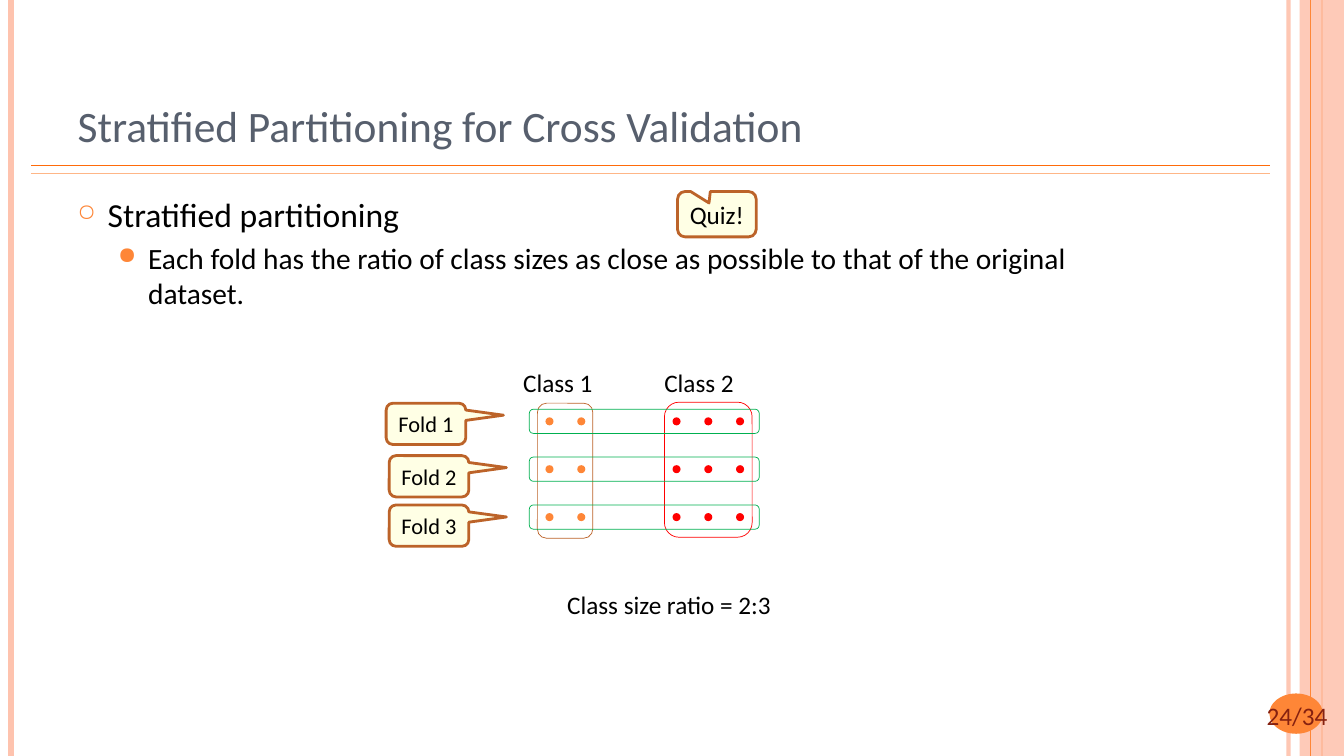
import pptx
import pptx.dml.color
import pptx.enum.shapes
import pptx.enum.text
import pptx.oxml
import pptx.oxml.ns
import pptx.util

Inches = pptx.util.Inches
Pt = pptx.util.Pt
RGBColor = pptx.dml.color.RGBColor
SHAPE = pptx.enum.shapes.MSO_SHAPE
ALIGN = pptx.enum.text.PP_ALIGN
ANCHOR = pptx.enum.text.MSO_ANCHOR
AUTO_SIZE = pptx.enum.text.MSO_AUTO_SIZE
qn = pptx.oxml.ns.qn

BLACK = RGBColor(0x00, 0x00, 0x00)
SLATE = RGBColor(0x57, 0x5F, 0x6D)
ORANGE = RGBColor(0xFE, 0x86, 0x37)
DEEP_ORANGE = RGBColor(0xFF, 0x6B, 0x0A)
PALE_ORANGE = RGBColor(0xFE, 0xB6, 0x87)
PEACH = RGBColor(0xFE, 0xC3, 0xAE)
BROWN = RGBColor(0xBC, 0x63, 0x29)
MAROON = RGBColor(0x86, 0x21, 0x10)
RED = RGBColor(0xFF, 0x00, 0x00)
GREEN = RGBColor(0x00, 0xB0, 0x50)
CREAM = RGBColor(0xFF, 0xFF, 0xCC)

FONT = "Calibri"
LABEL_FRAME = {"word_wrap": False, "auto_size": AUTO_SIZE.SHAPE_TO_FIT_TEXT}

# Dot grid: columns and rows share one pitch each
DOT_SIZE = 0.08
DOT_LEFT, DOT_TOP = 5.41, 4.14
COLUMN_PITCH = 1.89 / 6
ROW_PITCH = 0.95 / 2
FOLDS = 3


def apply_format(target, values):
    for name, value in values.items():
        setattr(target, name, value)


def add_xml(parent, tag, **attributes):
    element = pptx.oxml.parse_xml(f'<{tag} {pptx.oxml.ns.nsdecls("a")}/>')
    for name, value in attributes.items():
        element.set(name, str(value))
    parent.append(element)
    return element


def set_opacity(element, percent):
    colour = next(element.iter(qn("a:srgbClr")))
    add_xml(colour, "a:alpha", val=percent * 1000)


def write(paragraph, text, size, colour=BLACK):
    run = paragraph.add_run()
    run.text = text
    apply_format(run.font, {"name": FONT, "size": Pt(size)})
    run.font.color.rgb = colour


def add_rule(slide, start, end, colour, width, opacity=100):
    rule = slide.shapes.add_connector(
        pptx.enum.shapes.MSO_CONNECTOR.STRAIGHT, *map(Inches, start + end))
    rule.line.color.rgb = colour
    rule.line.width = Pt(width)
    properties = rule._element.spPr
    if opacity < 100:
        set_opacity(properties, opacity)
    add_xml(properties, "a:effectLst")


def add_figure(slide, kind, place, fill=None, outline=None, width=0.5, opacity=100):
    figure = slide.shapes.add_shape(kind, *map(Inches, place))
    figure.shadow.inherit = False
    if fill is None:
        figure.fill.background()
    else:
        figure.fill.solid()
        figure.fill.fore_color.rgb = fill
        if opacity < 100:
            set_opacity(figure._element.spPr, opacity)
    if outline is None:
        figure.line.fill.background()
    else:
        figure.line.color.rgb = outline
        figure.line.width = Pt(width)
    return figure


def add_label(slide, place, text, align=ALIGN.LEFT, colour=BLACK):
    label = slide.shapes.add_textbox(*map(Inches, place))
    apply_format(label.text_frame, LABEL_FRAME)
    paragraph = label.text_frame.paragraphs[0]
    paragraph.alignment = align
    write(paragraph, text, 18, colour)


def add_callout(slide, place, text, size, tip):
    callout = add_figure(slide, SHAPE.ROUNDED_RECTANGULAR_CALLOUT, place,
                         CREAM, BROWN, 2, opacity=50)
    for index, value in enumerate(tip + (0.167,)):
        callout.adjustments[index] = value
    apply_format(callout.text_frame, {**LABEL_FRAME, "vertical_anchor": ANCHOR.MIDDLE})
    paragraph = callout.text_frame.paragraphs[0]
    paragraph.alignment = ALIGN.CENTER
    write(paragraph, text, size)


def add_bullet(paragraph, text, size, margin, mark, mark_size):
    properties = paragraph._p.get_or_add_pPr()
    properties.set("marL", str(Inches(margin)))
    properties.set("indent", str(Inches(-0.3)))
    add_xml(add_xml(properties, "a:buClr"), "a:srgbClr", val=ORANGE)
    add_xml(properties, "a:buSzPct", val=mark_size * 1000)
    add_xml(properties, "a:buChar", char=mark)
    write(paragraph, text, size)


def add_frame(slide):
    # Side bands
    add_rule(slide, (12.78, 0), (12.78, 7.5), PEACH, 3, 93)
    add_rule(slide, (0.11, 0), (0.11, 7.5), PEACH, 4.5)
    add_rule(slide, (13.11, 0), (13.11, 7.5), ORANGE, 1.5)
    add_figure(slide, SHAPE.RECTANGLE, (12.89, 0, 0.44, 7.5), PEACH, opacity=87)
    add_rule(slide, (13, 0), (13, 7.5), ORANGE, 0.75)
    # Double rule under the title
    add_rule(slide, (0.31, 1.64), (12.6, 1.64), DEEP_ORANGE, 1)
    add_rule(slide, (0.31, 1.72), (12.6, 1.72), PALE_ORANGE, 1)
    # Page number
    add_figure(slide, SHAPE.OVAL, (12.59, 6.88, 0.53, 0.4), ORANGE)
    add_label(slide, (12.26, 6.9, 1.21, 0.4), "24/34", ALIGN.CENTER, MAROON)


def add_title(slide):
    title = slide.shapes.title
    apply_format(title, {"left": Inches(0.67), "top": Inches(0.3),
                         "width": Inches(10.89), "height": Inches(1.25)})
    apply_format(title.text_frame, {"vertical_anchor": ANCHOR.BOTTOM, "word_wrap": True})
    paragraph = title.text_frame.paragraphs[0]
    paragraph.alignment = ALIGN.LEFT
    write(paragraph, "Stratified Partitioning for Cross Validation", 31, SLATE)


def add_definition(slide):
    definition = slide.shapes.add_textbox(*map(Inches, (0.67, 1.87, 10.89, 5.21)))
    definition.text_frame.word_wrap = True
    term = definition.text_frame.paragraphs[0]
    add_bullet(term, "Stratified partitioning", 24, 0.3, "○", 70)
    meaning = definition.text_frame.add_paragraph()
    apply_format(meaning, {"level": 1, "space_before": Pt(4.2)})
    add_bullet(meaning, "Each fold has the ratio of class sizes as close as possible "
               "to that of the original dataset.", 21, 0.7, "●", 80)


def add_partition(slide):
    # Samples of the two classes
    for columns, colour in (((0, 1), ORANGE), ((4, 5, 6), RED)):
        for column in columns:
            for row in range(FOLDS):
                add_figure(slide, SHAPE.OVAL,
                           (DOT_LEFT + column * COLUMN_PITCH, DOT_TOP + row * ROW_PITCH,
                            DOT_SIZE, DOT_SIZE), colour)
    # Class outlines
    add_figure(slide, SHAPE.ROUNDED_RECTANGLE, (5.33, 4, 0.55, 1.34), outline=BROWN)
    add_figure(slide, SHAPE.ROUNDED_RECTANGLE, (6.59, 3.99, 0.87, 1.34), outline=RED)
    # Fold outlines
    for row in range(FOLDS):
        add_figure(slide, SHAPE.ROUNDED_RECTANGLE,
                   (5.25, 4.06 + row * ROW_PITCH, 2.28, 0.24), outline=GREEN)
    # Class and fold labels
    for number, left in enumerate((5.09, 6.49), 1):
        add_label(slide, (left, 3.59, 0.9, 0.4), f"Class {number}")
    for number, corner in enumerate(((3.83, 4), (3.86, 4.52), (3.86, 5.01)), 1):
        add_callout(slide, corner + (0.79, 0.41), f"Fold {number}", 16, (0.972, -0.209))
    add_label(slide, (5.51, 5.8, 2.25, 0.4), "Class size ratio = 2:3", ALIGN.CENTER)


def main():
    deck = pptx.Presentation()
    apply_format(deck, {"slide_width": Inches(13.33), "slide_height": Inches(7.5)})
    slide = deck.slides.add_slide(deck.slide_layouts[5])
    add_frame(slide)
    add_definition(slide)
    add_title(slide)
    add_partition(slide)
    add_callout(slide, (6.72, 1.9, 0.78, 0.45), "Quiz!", 18, (-0.1, -0.247))
    deck.save("out.pptx")


if __name__ == "__main__":
    main()
